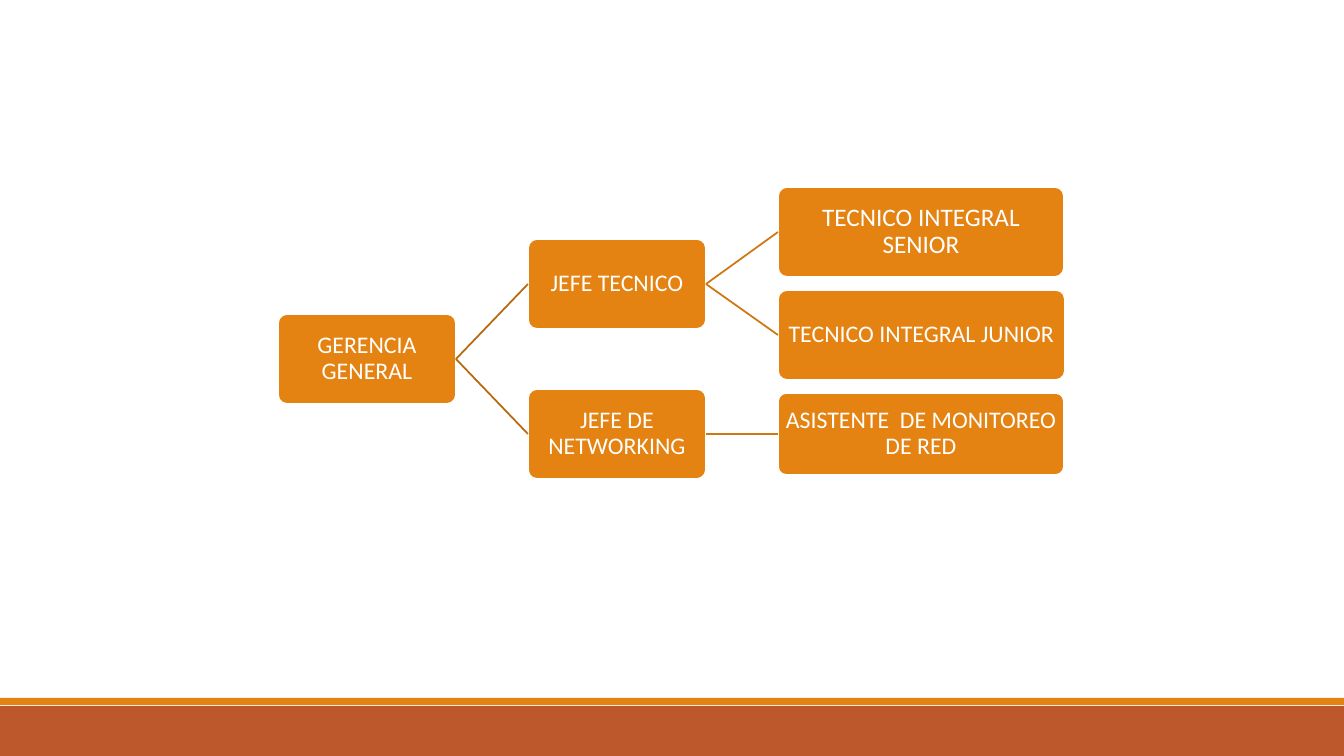
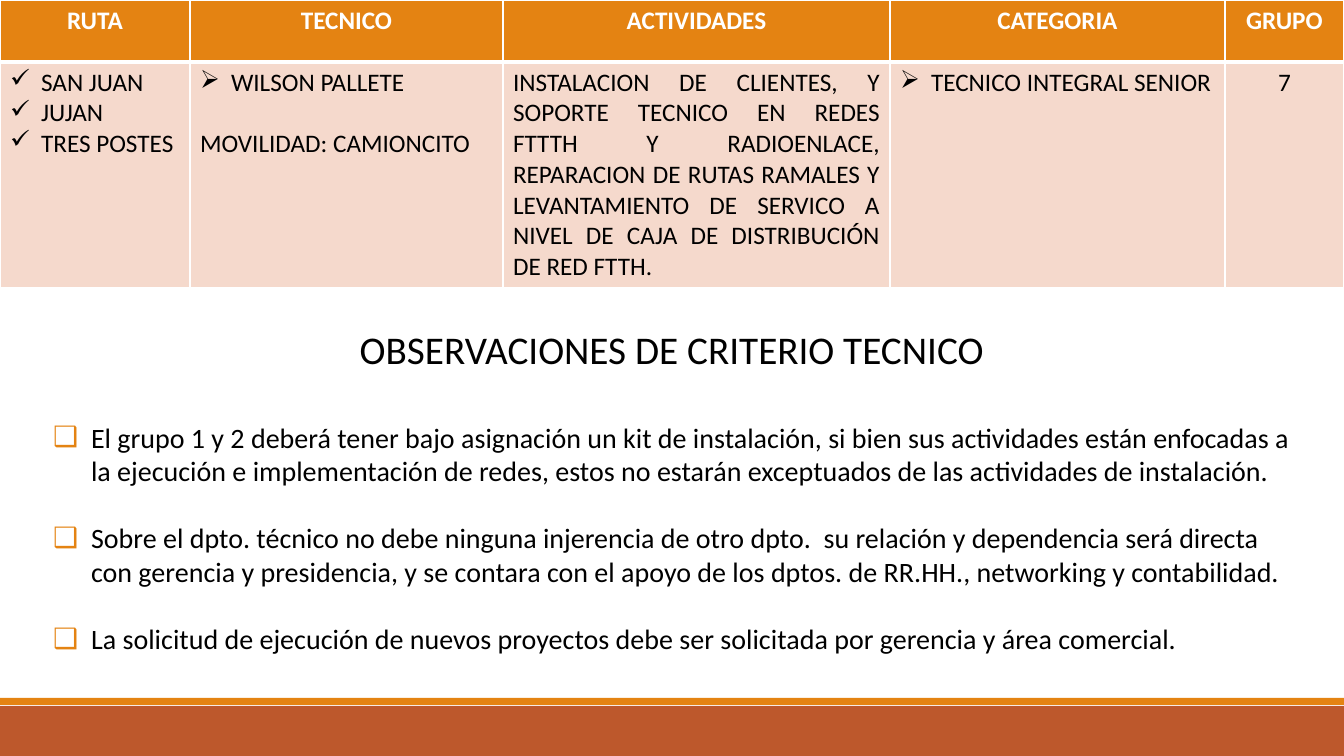
from dataclasses import dataclass

from lxml.etree import SubElement
from pptx import Presentation
from pptx.dml.color import RGBColor
from pptx.enum.shapes import MSO_CONNECTOR, MSO_SHAPE
from pptx.enum.text import MSO_ANCHOR, MSO_AUTO_SIZE, PP_ALIGN
from pptx.oxml import parse_xml
from pptx.oxml.ns import nsdecls, qn
from pptx.util import Emu, Pt

SLIDE_WIDTH, SLIDE_HEIGHT = 1344, 756
EMU_PER_PX = 12192000 / SLIDE_WIDTH


def px(length):
    return Emu(round(length * EMU_PER_PX))


@dataclass(frozen=True)
class Theme:
    font: str = "Calibri"
    accent: str = "E48312"
    band: str = "BD582C"
    cell: str = "F5D9CC"
    text: str = "000000"
    light: str = "FFFFFF"
    first_link: str = "B7690E"
    second_link: str = "CF7710"
    title_size: int = 28
    list_size: int = 20
    table_size: int = 18
    box_size: int = 17
    senior_box_size: int = 18
    line_width: float = 1.25
    cell_border: int = 1
    header_border: int = 3


class Deck:
    """Holds the presentation, its style and the slide being built."""

    BLANK, TITLE_AND_BODY = 6, 1

    def __init__(self, theme):
        self.theme = theme
        self.presentation = Presentation()
        self.presentation.slide_width = px(SLIDE_WIDTH)
        self.presentation.slide_height = px(SLIDE_HEIGHT)
        self.slide = None

    def new_slide(self, layout):
        layouts = self.presentation.slide_layouts
        self.slide = self.presentation.slides.add_slide(layouts[layout])

    def master_bands(self):
        """Build the bottom bands and move them to the slide master."""
        tree = self.presentation.slide_master.element.cSld.spTree
        bands = ((706, 50, self.theme.band), (698, 7, self.theme.accent))
        for number, (top, height, color) in enumerate(bands, start=101):
            band = self.shape(MSO_SHAPE.RECTANGLE, 0, top, SLIDE_WIDTH, height, color)
            band.line.fill.background()
            band.element.nvSpPr.cNvPr.set("id", str(number))
            tree.append(band.element)

    def shape(self, kind, left, top, width, height, color):
        shape = self.slide.shapes.add_shape(
            kind, px(left), px(top), px(width), px(height))
        shape.shadow.inherit = False
        shape.fill.solid()
        shape.fill.fore_color.rgb = RGBColor.from_string(color)
        return shape

    def style(self, paragraph, size, color, align=PP_ALIGN.LEFT, bold=False):
        paragraph.alignment = align
        font = paragraph.font
        font.name, font.size, font.bold = self.theme.font, Pt(size), bold
        font.color.rgb = RGBColor.from_string(color)

    def bullet(self, paragraph, character, indent, color=None):
        properties = paragraph._p.get_or_add_pPr()
        properties.set("marL", str(px(indent)))
        properties.set("indent", str(-px(indent)))
        if color:
            fill = SubElement(properties, qn("a:buClr"))
            SubElement(fill, qn("a:srgbClr")).set("val", color)
        SubElement(properties, qn("a:buChar")).set("char", character)

    def box(self, text, left, middle, width, height=90, size=None):
        """Add a rounded box whose vertical centre is at middle."""
        box = self.shape(MSO_SHAPE.ROUNDED_RECTANGLE, left, middle - height // 2,
                         width, height, self.theme.accent)
        box.adjustments[0] = 0.1
        box.line.color.rgb = RGBColor.from_string(self.theme.light)
        box.line.width = Pt(self.theme.line_width)
        frame = box.text_frame
        self.set_frame(frame, 5, 5, MSO_ANCHOR.MIDDLE)
        paragraph = frame.paragraphs[0]
        paragraph.text = text
        paragraph.line_spacing = 0.9
        self.style(paragraph, size or self.theme.box_size, self.theme.light,
                   PP_ALIGN.CENTER)
        return box

    def link(self, parent, child, color):
        """Join the right side of parent to the left side of child."""
        connector = self.slide.shapes.add_connector(MSO_CONNECTOR.STRAIGHT, 0, 0, 0, 0)
        connector.begin_connect(parent, 3)
        connector.end_connect(child, 1)
        connector.line.color.rgb = RGBColor.from_string(color)
        connector.line.width = Pt(self.theme.line_width)
        SubElement(connector.element.spPr, qn("a:effectLst"))

    def set_frame(self, frame, side, end, anchor):
        frame.word_wrap = True
        frame.auto_size = MSO_AUTO_SIZE.NONE
        frame.vertical_anchor = anchor
        frame.margin_left = frame.margin_right = px(side)
        frame.margin_top = frame.margin_bottom = px(end)

    def place(self, placeholder, left, top, width, height):
        placeholder.left, placeholder.top = px(left), px(top)
        placeholder.width, placeholder.height = px(width), px(height)
        self.set_frame(placeholder.text_frame, 10, 5, MSO_ANCHOR.TOP)
        return placeholder.text_frame

    def title(self, text, *bounds):
        frame = self.place(self.slide.shapes.title, *bounds)
        frame.text = text
        self.style(frame.paragraphs[0], self.theme.title_size, self.theme.text,
                   PP_ALIGN.CENTER)

    def checklist(self, items, *bounds):
        frame = self.place(self.slide.placeholders[1], *bounds)
        frame.text = "\n".join(items)
        for paragraph in frame.paragraphs:
            self.bullet(paragraph, "❑", 38, self.theme.accent)
            paragraph.line_spacing = 1.0
            paragraph.space_before = Pt(0)
            paragraph.space_after = Pt(24)
            self.style(paragraph, self.theme.list_size, self.theme.text)

    def table(self, columns, row_heights):
        """Add a table of (heading, width, lines, alignment) columns.

        A line is a (bullet character, text, points after) tuple.
        """
        frame = self.slide.shapes.add_table(
            2, len(columns), 0, 0, px(SLIDE_WIDTH), px(sum(row_heights)))
        table = frame.table
        table.horz_banding = False
        for row, height in zip(table.rows, row_heights):
            row.height = px(height)
        theme = self.theme
        for index, (heading, width, lines, align) in enumerate(columns):
            table.columns[index].width = px(width)
            self.cell(table.cell(0, index), [("", heading, 0)], theme.accent,
                      theme.light, PP_ALIGN.CENTER, True, theme.header_border)
            self.cell(table.cell(1, index), lines, theme.cell,
                      theme.text, align, False, theme.cell_border)

    def cell(self, cell, lines, fill, color, align, bold, bottom_border):
        cell.text = "\n".join(text for _, text, _ in lines)
        for paragraph, (character, _, after) in zip(cell.text_frame.paragraphs, lines):
            if character:
                self.bullet(paragraph, character, 31)
            paragraph.space_after = Pt(after)
            self.style(paragraph, self.theme.table_size, color, align, bold)
        cell.fill.solid()
        cell.fill.fore_color.rgb = RGBColor.from_string(fill)
        for position, side in enumerate("LRTB"):
            points = bottom_border if side == "B" else self.theme.cell_border
            cell._tc.get_or_add_tcPr().insert(position, parse_xml(
                f'<a:ln{side} {nsdecls("a")} w="{Pt(points)}"><a:solidFill>'
                f'<a:srgbClr val="{self.theme.light}"/></a:solidFill></a:ln{side}>'))


def organization_slide(deck):
    theme = deck.theme
    deck.new_slide(Deck.BLANK)
    deck.master_bands()
    manager_left, chief_left, staff_left = (278 + 250 * level for level in range(3))
    manager = deck.box("GERENCIA GENERAL", manager_left, 359, 178)
    technical = deck.box("JEFE TECNICO", chief_left, 284, 178)
    networking = deck.box("JEFE DE NETWORKING", chief_left, 434, 178)
    senior = deck.box("TECNICO INTEGRAL SENIOR", staff_left, 232, 286,
                      size=theme.senior_box_size)
    junior = deck.box("TECNICO INTEGRAL JUNIOR", staff_left, 335, 287)
    assistant = deck.box("ASISTENTE  DE MONITOREO DE RED", staff_left, 434, 286, 82)
    for chief in (technical, networking):
        deck.link(manager, chief, theme.first_link)
    for chief, staff in ((technical, senior), (technical, junior),
                         (networking, assistant)):
        deck.link(chief, staff, theme.second_link)


def observations_slide(deck):
    deck.new_slide(Deck.TITLE_AND_BODY)
    routes = [("✓", route, 0) for route in ("SAN JUAN", "JUJAN", "TRES POSTES")]
    technician = [("➢", "WILSON PALLETE", 22), ("", "MOVILIDAD: CAMIONCITO", 0)]
    activities = [("", "INSTALACION DE CLIENTES, Y SOPORTE TECNICO EN REDES FTTTH Y "
                   "RADIOENLACE, REPARACION DE RUTAS RAMALES Y LEVANTAMIENTO DE "
                   "SERVICO A NIVEL DE CAJA DE DISTRIBUCIÓN DE RED FTTH.", 0)]
    deck.table([
        ("RUTA", 190, routes, PP_ALIGN.LEFT),
        ("TECNICO", 313, technician, PP_ALIGN.LEFT),
        ("ACTIVIDADES", 387, activities, PP_ALIGN.JUSTIFY),
        ("CATEGORIA", 335, [("➢", "TECNICO INTEGRAL SENIOR", 0)], PP_ALIGN.LEFT),
        ("GRUPO", 119, [("", "7", 0)], PP_ALIGN.CENTER),
    ], (62, 225))
    deck.title("OBSERVACIONES DE CRITERIO TECNICO", 43, 320, 1257, 60)
    deck.checklist([
        "El grupo 1 y 2 deberá tener bajo asignación un kit de instalación, si bien "
        "sus actividades están enfocadas a la ejecución e implementación de redes, "
        "estos no estarán exceptuados de las actividades de instalación.",
        "Sobre el dpto. técnico no debe ninguna injerencia de otro dpto.  su relación "
        "y dependencia será directa con gerencia y presidencia, y se contara con el "
        "apoyo de los dptos. de RR.HH., networking y contabilidad.",
        "La solicitud de ejecución de nuevos proyectos debe ser solicitada por "
        "gerencia y área comercial.",
    ], 43, 415, 1257, 280)


def main():
    deck = Deck(Theme())
    organization_slide(deck)
    observations_slide(deck)
    deck.presentation.save("out.pptx")


if __name__ == "__main__":
    main()
